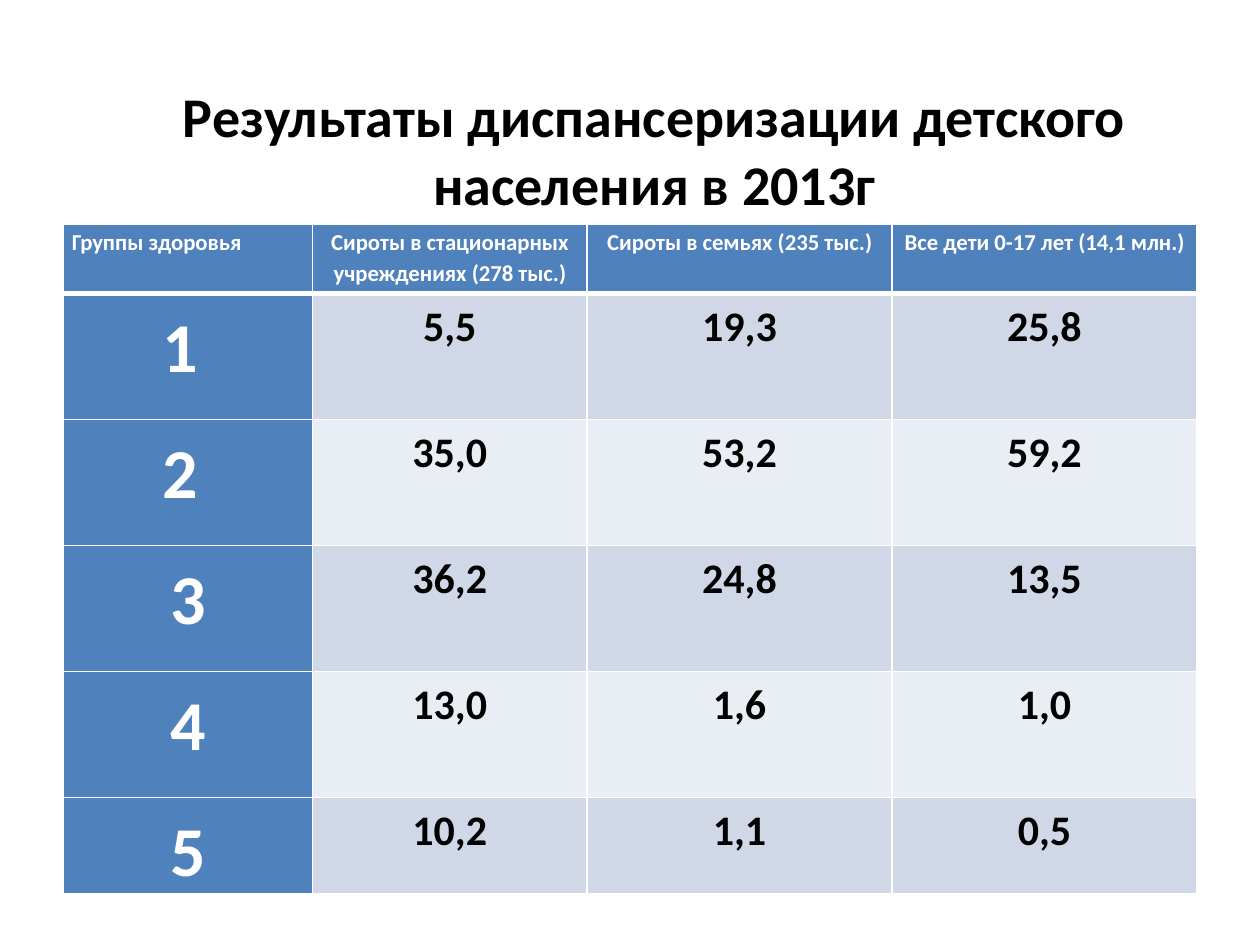
import dataclasses
import typing

import lxml.etree
import pptx
import pptx.dml.color
import pptx.enum.text
import pptx.oxml.ns
import pptx.util

WIDTH = 10
HEIGHT = 7.5
COLUMN_WIDTHS = (1.98, 2.18, 2.42, 2.42)
ROW_HEIGHTS = (0.55, 1, 1, 1, 1, 0.67)
FONT = "Calibri"
COLORS = {
    "header": "4F81BD",
    "odd": "D0D8E8",
    "even": "E9EDF4",
    "white": "FFFFFF",
    "black": "000000",
}
CENTER = pptx.enum.text.PP_ALIGN.CENTER
LEFT = pptx.enum.text.PP_ALIGN.LEFT
TITLE = "Результаты диспансеризации детского населения в 2013г"
ROWS = (
    (
        "Группы здоровья",
        "Сироты в стационарных учреждениях (278 тыс.)",
        "Сироты в семьях (235 тыс.)",
        "Все дети 0-17 лет (14,1 млн.)",
    ),
    ("1 ", "5,5", "19,3", "25,8"),
    ("2 ", "35,0", "53,2", "59,2"),
    ("3", "36,2", "24,8", "13,5"),
    ("4", "13,0", "1,6", "1,0"),
    ("5", "10,2", "1,1", "0,5"),
)


@dataclasses.dataclass(frozen=True)
class CellStyle:
    size: int
    color: str
    fill: str
    alignment: typing.Any = CENTER


def apply_format(target: typing.Any, values: dict) -> None:
    for name, value in values.items():
        setattr(target, name, value)


def rgb(name: str) -> pptx.dml.color.RGBColor:
    return pptx.dml.color.RGBColor.from_string(COLORS[name])


def write_text(frame: typing.Any, text: str, size: int, color: str,
               alignment: typing.Any, spacing: float) -> None:
    paragraph = frame.paragraphs[0]
    apply_format(paragraph, {"alignment": alignment, "line_spacing": spacing})
    run = paragraph.add_run()
    run.text = text
    apply_format(run.font, {"name": FONT, "size": pptx.util.Pt(size), "bold": True})
    run.font.color.rgb = rgb(color)


def add_border(cell: typing.Any, side: str, points: float) -> None:
    qualified = pptx.oxml.ns.qn
    properties = cell._tc.get_or_add_tcPr()
    line = lxml.etree.SubElement(
        properties, qualified(f"a:ln{side}"), w=str(pptx.util.Pt(points)))
    fill = lxml.etree.SubElement(line, qualified("a:solidFill"))
    lxml.etree.SubElement(fill, qualified("a:srgbClr"), val=COLORS["white"])


def style_for(row: int, column: int) -> CellStyle:
    if row == 0:
        return CellStyle(13, "white", "header", CENTER if column else LEFT)
    if column == 0:
        return CellStyle(40, "white", "header")
    return CellStyle(24, "black", "odd" if row % 2 else "even")


def draw_cell(cell: typing.Any, text: str, row: int, column: int) -> None:
    style = style_for(row, column)
    side_margin = pptx.util.Inches(0.07)
    apply_format(cell, {
        "margin_left": side_margin,
        "margin_right": side_margin,
        "margin_top": 0,
        "margin_bottom": 0,
    })
    borders = {"L": 1, "R": 1, "T": 3 if row == 1 else 1, "B": 3 if row == 0 else 1}
    for side, points in borders.items():
        add_border(cell, side, points)
    cell.fill.solid()
    cell.fill.fore_color.rgb = rgb(style.fill)
    write_text(cell.text_frame, text, style.size, style.color, style.alignment, 1.15)


def draw_table(slide: typing.Any) -> None:
    table = slide.shapes.add_table(
        len(ROWS), len(COLUMN_WIDTHS),
        pptx.util.Inches(0.05 * WIDTH), pptx.util.Inches(1.78),
        pptx.util.Inches(sum(COLUMN_WIDTHS)), pptx.util.Inches(sum(ROW_HEIGHTS)),
    ).table
    for column, width in zip(table.columns, COLUMN_WIDTHS):
        column.width = pptx.util.Inches(width)
    for row, height in zip(table.rows, ROW_HEIGHTS):
        row.height = pptx.util.Inches(height)
    for row, texts in enumerate(ROWS):
        for column, text in enumerate(texts):
            draw_cell(table.cell(row, column), text, row, column)


def draw_title(slide: typing.Any) -> None:
    title = slide.shapes.title
    apply_format(title, {
        "left": pptx.util.Inches(0.59),
        "top": pptx.util.Inches(0.08 * HEIGHT),
        "width": pptx.util.Inches(9.21),
        "height": pptx.util.Inches(1.18),
    })
    apply_format(title.text_frame, {
        "word_wrap": True,
        "auto_size": pptx.enum.text.MSO_AUTO_SIZE.SHAPE_TO_FIT_TEXT,
        "vertical_anchor": pptx.enum.text.MSO_ANCHOR.TOP,
    })
    write_text(title.text_frame, TITLE, 32, "black", CENTER, 1.0)


def main() -> None:
    presentation = pptx.Presentation()
    apply_format(presentation, {
        "slide_width": pptx.util.Inches(WIDTH),
        "slide_height": pptx.util.Inches(HEIGHT),
    })
    slide = presentation.slides.add_slide(
        presentation.slide_layouts.get_by_name("Title Only"))
    draw_table(slide)
    draw_title(slide)
    presentation.save("out.pptx")


if __name__ == "__main__":
    main()
